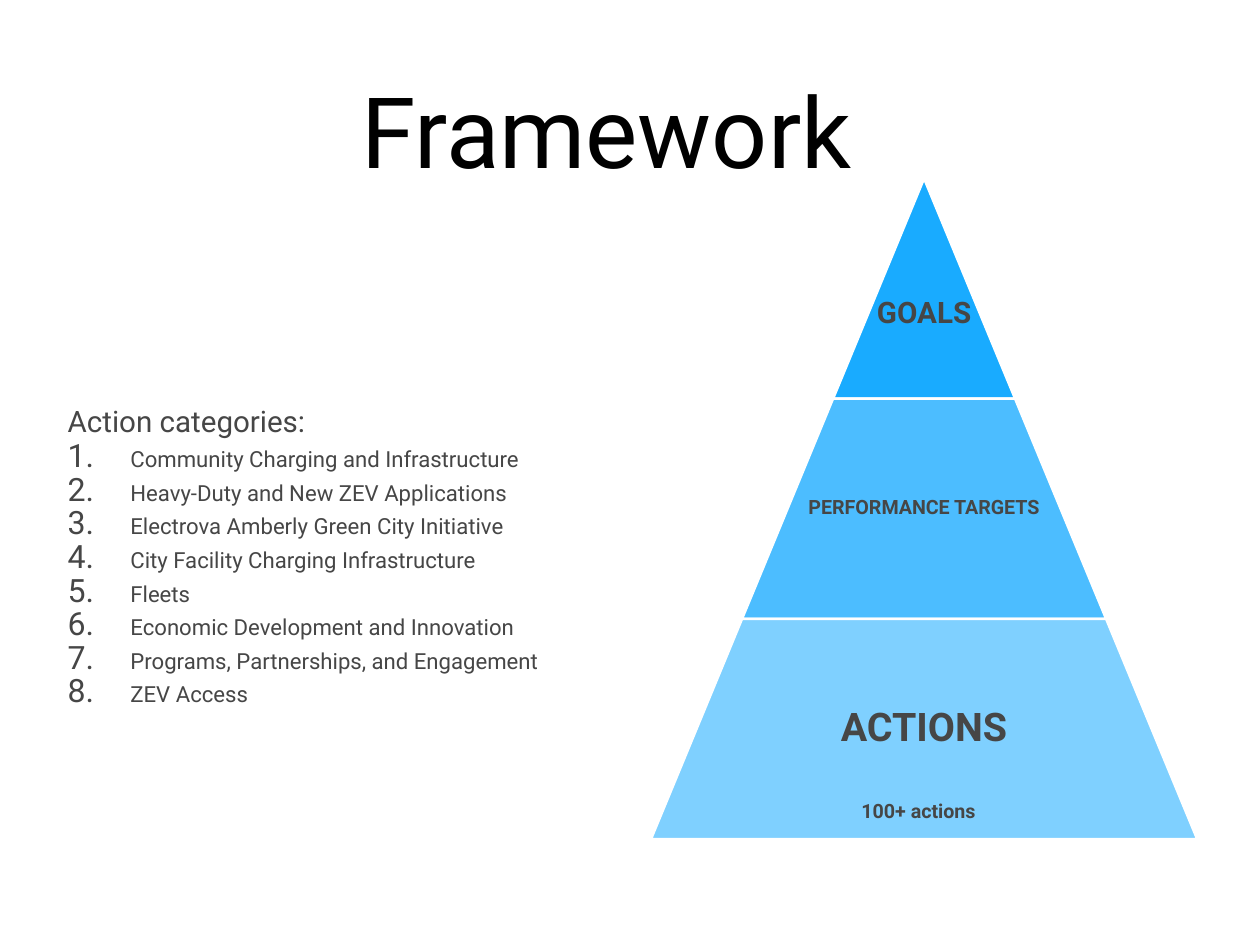
from lxml.etree import SubElement
from pptx import Presentation
from pptx.dml.color import RGBColor
from pptx.enum.text import MSO_ANCHOR as Anchor, PP_ALIGN as Align
from pptx.oxml.ns import qn
from pptx.util import Pt

BLACK = RGBColor(0x00, 0x00, 0x00)
GRAY = RGBColor(0x46, 0x46, 0x46)
WHITE = RGBColor(0xFF, 0xFF, 0xFF)
BLUE = RGBColor(0x00, 0xA2, 0xFF)

TOPICS = [
    "Community Charging and Infrastructure",
    "Heavy-Duty and New ZEV Applications",
    "Electrova Amberly Green City Initiative",
    "City Facility Charging Infrastructure",
    "Fleets",
    "Economic Development and Innovation",
    "Programs, Partnerships, and Engagement",
    "ZEV Access",
]

# Pyramid: centre line, top, height of a tier, growth of half its width per tier
MID, TOP, RISE, STEP = 751, 145, 179, 74
# Opacity of each tier in percent
TIERS = [90, 70, 50]
# Label, top, width, height, size, anchor
LABELS = [
    ("GOALS", 198.5, 148, 72, 24, Anchor.BOTTOM),
    ("PERFORMANCE TARGETS", 394, 192, 38, 16, Anchor.MIDDLE),
    ("ACTIONS", 571, 289, 42, 32, Anchor.MIDDLE),
]


def write(par, text, size, color=GRAY, font="Roboto", bold=False,
          align=Align.LEFT, before=0, line=None):
    par.alignment = align
    par.space_before = Pt(before)
    if line:
        par.line_spacing = line
    run = par.add_run()
    run.text = text
    run.font.name = font
    run.font.size = Pt(size)
    run.font.bold = bold
    run.font.color.rgb = color


def number(par, indent, scale):
    """Number the paragraph, with the number scaled in percent of the text."""
    props = par._p.get_or_add_pPr()
    props.set("marL", str(Pt(indent)))
    props.set("indent", str(-Pt(indent)))
    SubElement(props, qn("a:buSzPct"), val=str(scale * 1000))
    SubElement(props, qn("a:buAutoNum"), type="arabicPeriod")


class Board:
    def __init__(self, slide, fill, edge, width):
        self.shapes = slide.shapes
        self.fill, self.edge, self.width = fill, edge, width

    def box(self, left, top, width, height, pad, anchor=Anchor.MIDDLE, right=None):
        """Add an empty text box and return its frame."""
        area = [Pt(n) for n in (left, top, width, height)]
        frame = self.shapes.add_textbox(*area).text_frame
        frame.word_wrap = True
        frame.vertical_anchor = anchor
        frame.margin_left = frame.margin_top = frame.margin_bottom = Pt(pad)
        frame.margin_right = Pt(pad if right is None else right)
        return frame

    def tier(self, rank, alpha):
        top, low = TOP + rank * RISE, TOP + (rank + 1) * RISE
        near, far = rank * STEP, (rank + 1) * STEP
        ends = [(MID - far, low), (MID - near, top), (MID + near, top), (MID + far, low)]
        # The two upper corners of the first tier are one point
        first, *rest = [(Pt(x), Pt(y)) for x, y in dict.fromkeys(ends)]
        path = self.shapes.build_freeform(*first)
        path.add_line_segments(rest, close=True)
        shape = path.convert_to_shape()
        shape.shadow.inherit = False
        shape.fill.solid()
        shape.fill.fore_color.rgb = self.fill
        tint = shape._element.spPr.find(qn("a:solidFill"))[0]
        SubElement(tint, qn("a:alpha"), val=str(alpha * 1000))
        shape.line.color.rgb = self.edge
        shape.line.width = Pt(self.width)


def main():
    deck = Presentation()
    deck.slide_width, deck.slide_height = Pt(1024), Pt(768)
    board = Board(deck.slides.add_slide(deck.slide_layouts[6]), BLUE, WHITE, 2.08)

    title = board.box(75, 20, 874, 170, 4, right=42)
    write(title.paragraphs[0], "Framework", 80, color=BLACK, align=Align.CENTER)

    body = board.box(51, 187, 538, 528.5, 4)
    write(body.paragraphs[0], "Action categories:", 24, before=7.1)
    for topic in TOPICS:
        par = body.add_paragraph()
        write(par, topic, 18, before=5.7)
        number(par, 51, 145)

    for rank, (alpha, label) in enumerate(zip(TIERS, LABELS)):
        board.tier(rank, alpha)
        text, top, width, height, size, anchor = label
        frame = board.box(MID - width / 2, top, width, height, 2, anchor)
        write(frame.paragraphs[0], text, size, bold=True, align=Align.CENTER, line=0.9)

    count = board.box(551, 644, 391, 29.5, 5, Anchor.TOP)
    write(count.paragraphs[0], "100+ actions", 16, bold=True, align=Align.CENTER)

    deck.save("out.pptx")


if __name__ == "__main__":
    main()
